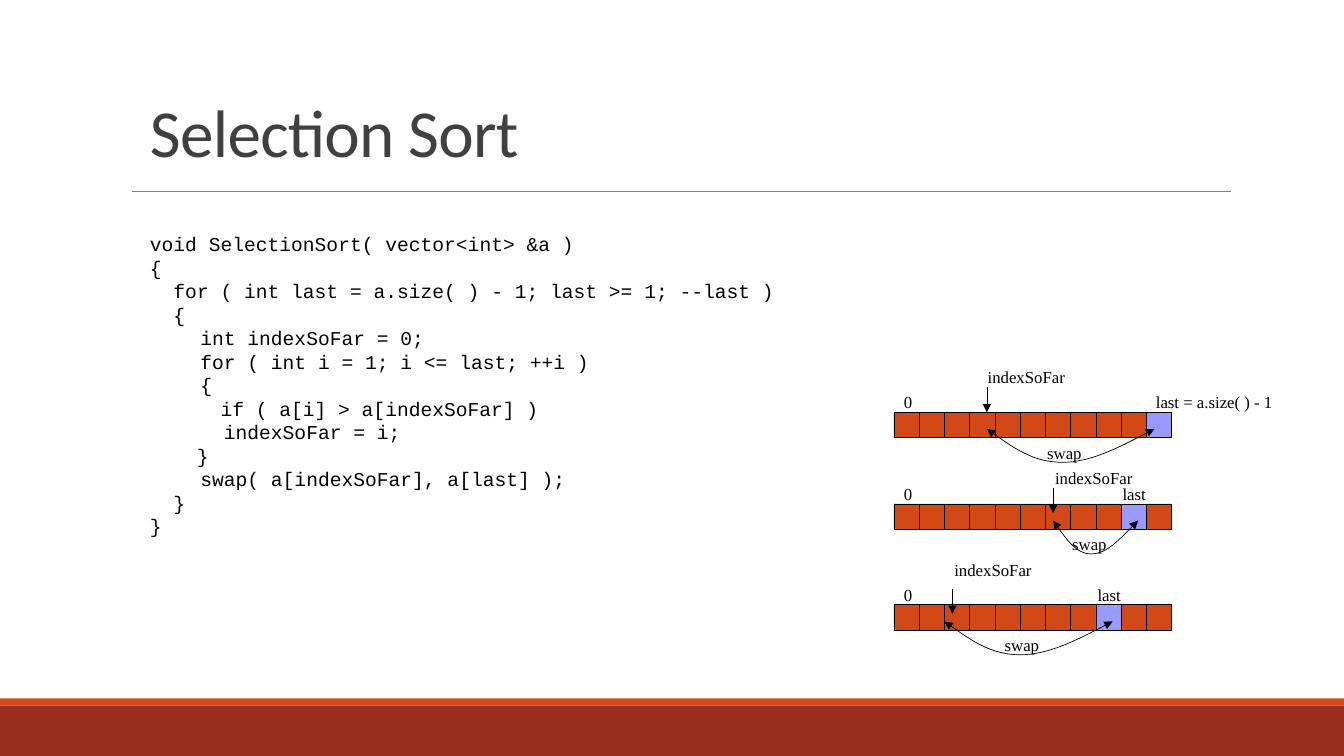
from lxml import etree
from pptx import Presentation
from pptx.dml.color import RGBColor
from pptx.enum.shapes import MSO_CONNECTOR, MSO_SHAPE
from pptx.enum.text import MSO_ANCHOR
from pptx.oxml.ns import qn
from pptx.util import Cm, Pt

RECTANGLE = MSO_SHAPE.RECTANGLE
STRAIGHT = MSO_CONNECTOR.STRAIGHT
BOTTOM = MSO_ANCHOR.BOTTOM

COLORS = {
    "band": "9B2D1F",
    "cell": "D34817",
    "last": "9999FF",
    "title": "404040",
    "rule": "808080",
    "ink": "000000",
}
TITLE = "Selection Sort"
CODE = [
    (0, 0, "void SelectionSort( vector<int> &a )"),
    (0, 0, "{"),
    (0, 2, "for ( int last = a.size( ) - 1; last >= 1; --last )"),
    (0, 2, "{"),
    (1, 0, "int indexSoFar = 0;"),
    (1, 0, "for ( int i = 1; i <= last; ++i )"),
    (1, 0, "{"),
    (0, 6, "if ( a[i] > a[indexSoFar] )"),
    (1, 2, "indexSoFar = i;"),
    (0, 4, "}"),
    (1, 0, "swap( a[indexSoFar], a[last] );"),
    (0, 2, "}"),
    (0, 0, "}"),
]
ARRAYS = [
    {"top": 10.39, "last": 10, "last_label": ("last = a.size( ) - 1", 28.88, 3.45),
     "index_label": (24.64, 9.12), "pointer": (24.87, 10.39),
     "swap": (24.87, 29.09), "swap_label": 26.14},
    {"top": 12.7, "last": 9, "last_label": ("last", 28.04, 1.09),
     "index_label": (26.34, 11.66), "pointer": (26.54, 12.93),
     "swap": (26.54, 28.68), "swap_label": 26.77},
    {"top": 15.24, "last": 8, "last_label": ("last", 27.41, 1.09),
     "index_label": (23.8, 13.97), "pointer": (24, 15.47),
     "swap": (23.8, 28.04), "swap_label": 25.07},
]
SWAP_CURVE = [(0.14, 0.5), (0.28, 1), (0.45, 1), (0.62, 1), (0.81, 0.5), (1, 0)]

CELL_COUNT = 11
ARRAY_LEFT = 22.53
CELL_SIZE = 7 / CELL_COUNT
SWAP_DROP = 0.42
SWAP_DEPTH = 0.84
TAB_WIDTH = 1.27
CODE_SIZE = 14
CHARACTER_WIDTH = CODE_SIZE * 0.6 * 2.54 / 72


def color(name):
    return RGBColor.from_string(COLORS[name])


def add_box(left, top, width, height, fill, outlined=False):
    shape = slide.shapes.add_shape(RECTANGLE, Cm(left), Cm(top), Cm(width), Cm(height))
    shape.shadow.inherit = False
    shape.fill.solid()
    shape.fill.fore_color.rgb = color(fill)
    if outlined:
        shape.line.color.rgb = color("ink")
        shape.line.width = Pt(0.5)
    else:
        shape.line.fill.background()


def add_text(lines, left, top, width, height, font, size, ink="ink", wrap=False):
    box = slide.shapes.add_textbox(Cm(left), Cm(top), Cm(width), Cm(height))
    frame = box.text_frame
    frame.word_wrap = wrap
    frame.text = "\n".join(lines)
    for paragraph in frame.paragraphs:
        paragraph.font.name = font
        paragraph.font.size = Pt(size)
        paragraph.font.color.rgb = color(ink)
    return frame


def add_label(text, left, top, width):
    add_text([text], left, top, width, 0.76, "Times New Roman", 12)


def style_line(shape, ink, arrowheads=()):
    shape.line.color.rgb = color(ink)
    shape.line.width = Pt(0.5)
    outline = shape.line._get_or_add_ln()
    for end in arrowheads:
        etree.SubElement(outline, qn("a:" + end), type="triangle")


def add_line(start, end, ink, arrowheads=()):
    connector = slide.shapes.add_connector(STRAIGHT, *map(Cm, start + end))
    style_line(connector, ink, arrowheads)
    etree.SubElement(connector._element.spPr, qn("a:effectLst"))


def add_swap_curve(left, right, top):
    points = [(Cm(left + x * (right - left)), Cm(top + y * SWAP_DEPTH)) for x, y in SWAP_CURVE]
    builder = slide.shapes.build_freeform(Cm(left), Cm(top))
    builder.add_line_segments(points, close=False)
    shape = builder.convert_to_shape()
    shape.shadow.inherit = False
    shape.fill.background()
    style_line(shape, "ink", ("headEnd", "tailEnd"))
    outline_path = shape._element.spPr.find(".//" + qn("a:path"))
    segments = outline_path.findall(qn("a:lnTo"))
    for first in range(0, len(segments), 3):
        curve = etree.SubElement(outline_path, qn("a:cubicBezTo"))
        for segment in segments[first:first + 3]:
            curve.append(segment[0])
            outline_path.remove(segment)


def add_array(array):
    top = array["top"]
    for index in range(CELL_COUNT):
        fill = "last" if index == array["last"] else "cell"
        add_box(ARRAY_LEFT + index * CELL_SIZE, top, CELL_SIZE, CELL_SIZE, fill, True)
    add_label("0", ARRAY_LEFT, top - CELL_SIZE, 0.71)
    text, left, width = array["last_label"]
    add_label(text, left, top - CELL_SIZE, width)
    add_label("indexSoFar", *array["index_label"], 2.46)
    x, tip = array["pointer"]
    add_line((x, tip - CELL_SIZE), (x, tip), "ink", ("tailEnd",))
    add_swap_curve(*array["swap"], top + SWAP_DROP)
    add_label("swap", array["swap_label"], top + CELL_SIZE, 1.37)


presentation = Presentation()
presentation.slide_width = Cm(33.87)
presentation.slide_height = Cm(19.05)
slide = presentation.slides.add_slide(presentation.slide_layouts[6])

add_box(0, 17.78, 33.87, 1.27, "band")
add_box(0, 17.6, 33.87, 0.18, "cell")
add_line((3.33, 4.82), (31.01, 4.82), "rule")

title = add_text([TITLE], 3.53, 1.68, 25.4, 2.74, "Calibri", 48, "title", True)
title.vertical_anchor = BOTTOM
title.paragraphs[0].line_spacing = 0.8
title.paragraphs[0].runs[0].font._element.set("spc", "-50")

code = add_text([text for _, _, text in CODE], 3.53, 5.72, 16.4, 8.03,
                "Courier New", CODE_SIZE, wrap=True)
for paragraph, (tabs, spaces, _) in zip(code.paragraphs, CODE):
    indent = Cm(tabs * TAB_WIDTH + spaces * CHARACTER_WIDTH)
    paragraph._p.get_or_add_pPr().set("marL", str(indent))

for array in ARRAYS:
    add_array(array)

presentation.save("out.pptx")
